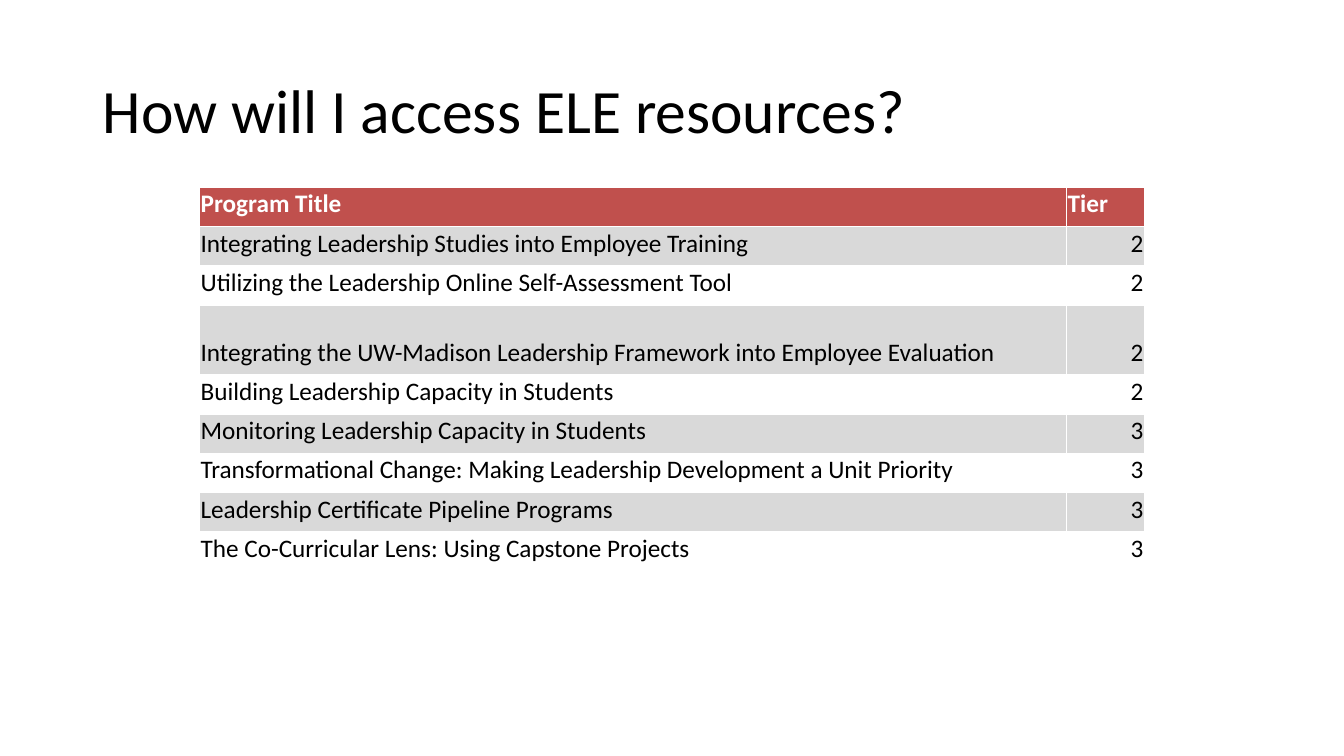
"""Builds a slide with a table of leadership programs and their tiers."""
from pptx import Presentation
from pptx.dml.color import RGBColor
from pptx.enum.text import MSO_ANCHOR as ANCHOR, PP_ALIGN as ALIGN
from pptx.util import Inches, Pt

COLORS = {"text": "000000", "header_text": "FFFFFF", "header": "C0504D", "band": "D9D9D9"}
PROGRAMS = [
    ("Program Title", "Tier"),
    ("Integrating Leadership Studies into Employee Training", "2"),
    ("Utilizing the Leadership Online Self-Assessment Tool", "2"),
    ("Integrating the UW-Madison Leadership Framework into Employee Evaluation", "2"),
    ("Building Leadership Capacity in Students", "2"),
    ("Monitoring Leadership Capacity in Students", "3"),
    ("Transformational Change: Making Leadership Development a Unit Priority", "3"),
    ("Leadership Certificate Pipeline Programs", "3"),
    ("The Co-Curricular Lens: Using Capstone Projects", "3"),
]
COLUMN_WIDTHS = [8.6, 0.77]
ROW_HEIGHTS = [0.39] * 3 + [0.69] + [0.39] * 5


def write(tf, text, size=18, color="text", bold=False, align=ALIGN.LEFT, spacing=1.0):
    p = tf.paragraphs[0]
    p.alignment = align
    p.line_spacing = spacing
    r = p.add_run()
    r.text = text
    r.font.name = "Calibri"
    r.font.size = Pt(size)
    r.font.bold = bold
    r.font.color.rgb = RGBColor.from_string(COLORS[color])


prs = Presentation()
prs.slide_width = Inches(13.33)
prs.slide_height = Inches(7.5)
s = prs.slides.add_slide(prs.slide_layouts[6])

title = s.shapes.add_textbox(Inches(0.92), Inches(0.4), Inches(11.5), Inches(1.45))
tf = title.text_frame
tf.word_wrap = True
tf.vertical_anchor = ANCHOR.MIDDLE
write(tf, "How will I access ELE resources?", size=44, spacing=0.9)

table = s.shapes.add_table(
    len(PROGRAMS), len(COLUMN_WIDTHS), Inches(1.98), Inches(1.86),
    Inches(sum(COLUMN_WIDTHS)), Inches(sum(ROW_HEIGHTS))).table
table.first_row = False
table.horz_banding = False
for column, width in zip(table.columns, COLUMN_WIDTHS):
    column.width = Inches(width)

for i, (program, height) in enumerate(zip(PROGRAMS, ROW_HEIGHTS)):
    table.rows[i].height = Inches(height)
    header = i == 0
    for j, text in enumerate(program):
        cell = table.cell(i, j)
        cell.vertical_anchor = ANCHOR.BOTTOM
        cell.margin_left = cell.margin_top = cell.margin_right = Inches(0.01)
        cell.margin_bottom = Inches(0.07)
        if header or i % 2:
            cell.fill.solid()
            cell.fill.fore_color.rgb = RGBColor.from_string(COLORS["header" if header else "band"])
        else:
            cell.fill.background()
        write(cell.text_frame, text, bold=header,
              color="header_text" if header else "text",
              align=ALIGN.RIGHT if j and not header else ALIGN.LEFT)

prs.save("out.pptx")
